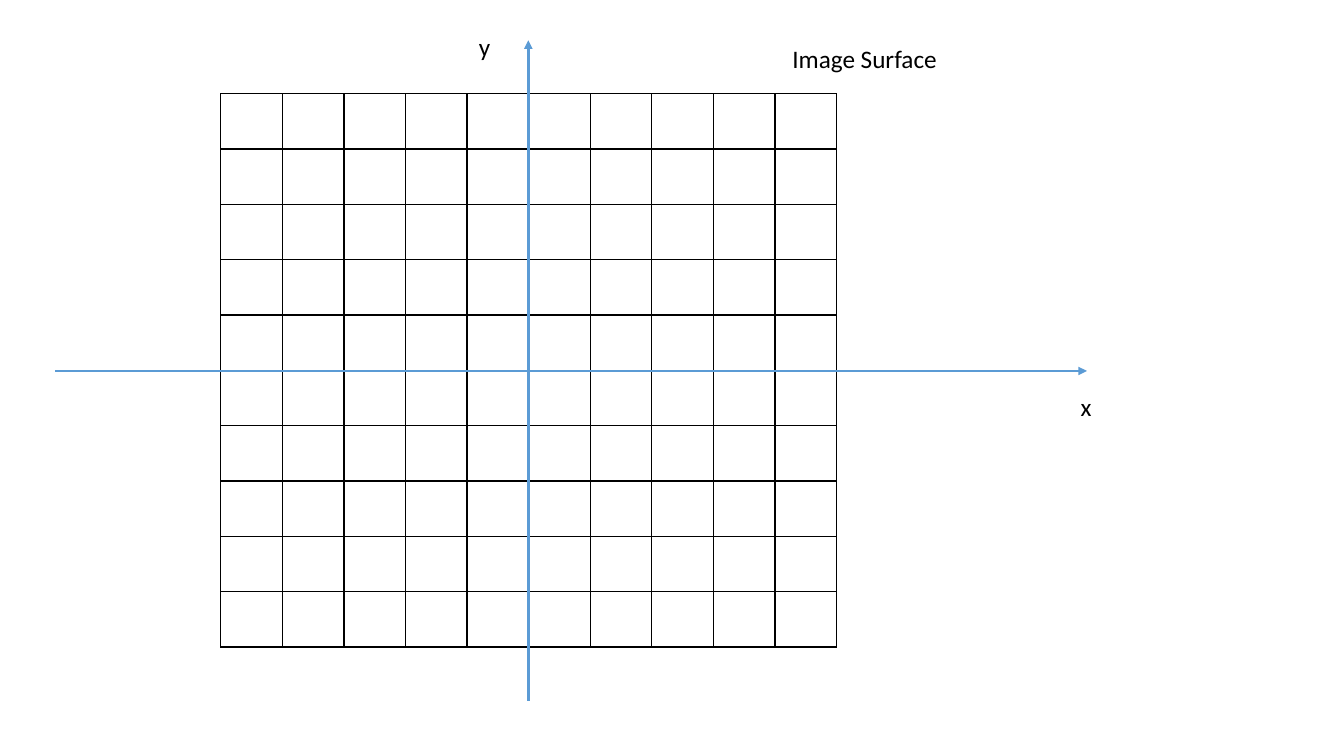
from dataclasses import dataclass

from lxml.etree import SubElement
from pptx import Presentation
from pptx.dml.color import RGBColor
from pptx.enum.shapes import MSO_CONNECTOR
from pptx.enum.text import MSO_AUTO_SIZE
from pptx.oxml.ns import qn
from pptx.slide import Slide
from pptx.util import Emu, Pt

PX = 9144
BLACK = "000000"
BLUE = "5B9BD5"
GRID_SIZE = 10


@dataclass(frozen=True)
class Axis:
    x1: int
    y1: int
    x2: int
    y2: int


@dataclass(frozen=True)
class Label:
    text: str
    x: int
    y: int
    w: int
    h: int = 40


AXES = [Axis(55, 368, 1078, 368), Axis(524, 695, 524, 40)]
LABELS = [
    Label("x", 1062, 383, 31),
    Label("y", 465, 26, 32),
    Label("Image Surface", 776, 38, 165),
]


def px(n: int) -> Emu:
    return Emu(n * PX)


def rgb(color: str) -> RGBColor:
    return RGBColor.from_string(color)


def add_border(cell, color: str, width: float) -> None:
    tc_pr = cell._tc.get_or_add_tcPr()
    for side in ("a:lnL", "a:lnR", "a:lnT", "a:lnB"):
        ln = SubElement(tc_pr, qn(side), w=str(Pt(width)))
        fill = SubElement(ln, qn("a:solidFill"))
        SubElement(fill, qn("a:srgbClr"), val=color)


def add_grid(s: Slide, x: int, y: int, w: int, h: int) -> None:
    frame = s.shapes.add_table(GRID_SIZE, GRID_SIZE, px(x), px(y), px(w), px(h))
    table = frame.table
    table.first_row = False
    table.horz_banding = False
    for col in table.columns:
        col.width = px(w) // GRID_SIZE
    for row in table.rows:
        row.height = px(h) // GRID_SIZE
    for cell in table.iter_cells():
        add_border(cell, BLACK, 1)
        cell.fill.background()


def add_axis(s: Slide, axis: Axis) -> None:
    sp = s.shapes.add_connector(
        MSO_CONNECTOR.STRAIGHT, px(axis.x1), px(axis.y1), px(axis.x2), px(axis.y2)
    )
    sp.line.color.rgb = rgb(BLUE)
    sp.line.width = Pt(2)
    SubElement(sp.line._get_or_add_ln(), qn("a:tailEnd"), type="triangle")
    SubElement(sp._element.spPr, qn("a:effectLst"))


def add_text(tf, text: str, *, size: int = 18, font: str = "Calibri",
             color: str = BLACK) -> None:
    r = tf.paragraphs[0].add_run()
    r.text = text
    r.font.size = Pt(size)
    r.font.name = font
    r.font.color.rgb = rgb(color)


def add_label(s: Slide, label: Label) -> None:
    sp = s.shapes.add_textbox(px(label.x), px(label.y), px(label.w), px(label.h))
    tf = sp.text_frame
    tf.word_wrap = False
    tf.auto_size = MSO_AUTO_SIZE.SHAPE_TO_FIT_TEXT
    add_text(tf, label.text)


def main() -> None:
    prs = Presentation()
    prs.slide_width = px(1333)
    prs.slide_height = px(750)
    s = prs.slides.add_slide(prs.slide_layouts[6])
    add_grid(s, 219, 93, 611, 549)
    for axis in AXES:
        add_axis(s, axis)
    for label in LABELS:
        add_label(s, label)
    prs.save("out.pptx")


if __name__ == "__main__":
    main()
